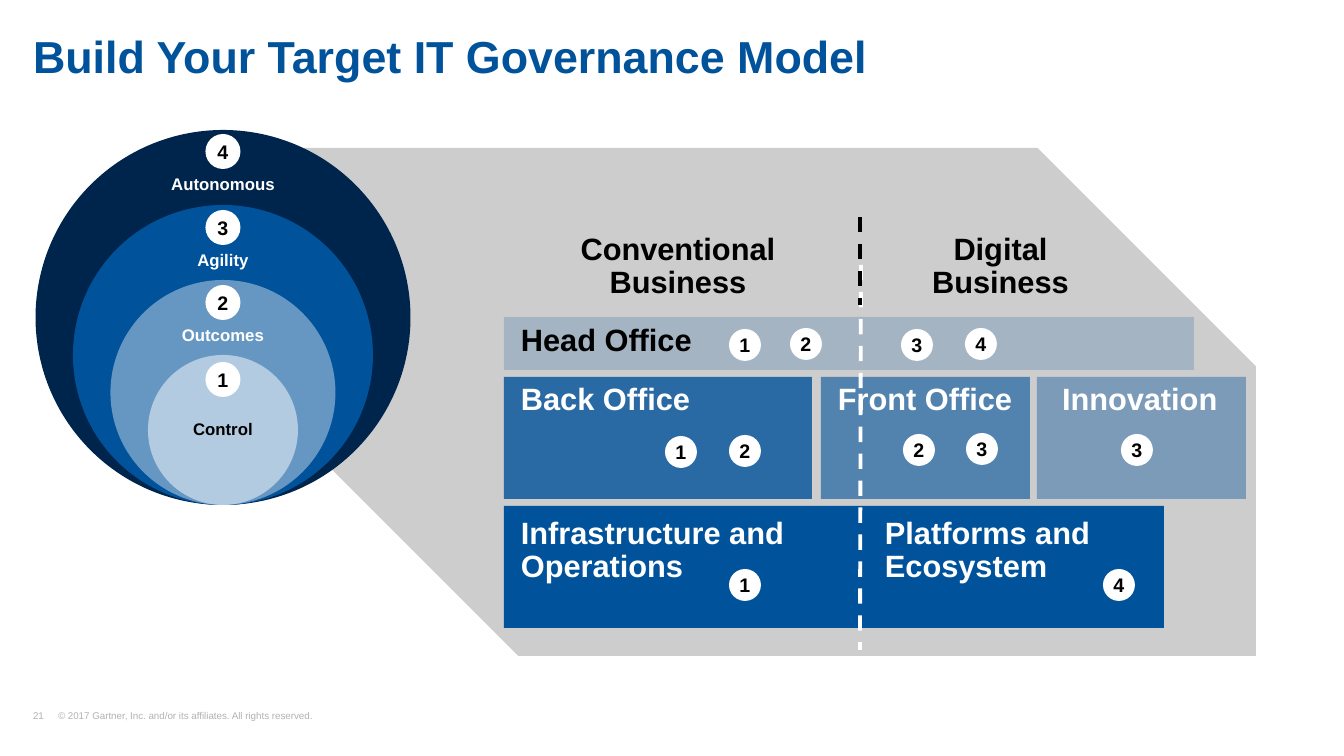
from lxml.etree import SubElement
from pptx import Presentation
from pptx.dml.color import RGBColor
from pptx.enum.dml import MSO_LINE
from pptx.enum.shapes import MSO_CONNECTOR, MSO_SHAPE
from pptx.enum.text import MSO_ANCHOR, PP_ALIGN
from pptx.oxml.ns import qn
from pptx.util import Pt

WHITE = RGBColor(0xFF, 0xFF, 0xFF)
BLACK = RGBColor(0x00, 0x00, 0x00)
NAVY = RGBColor(0x00, 0x25, 0x4C)
BLUE = RGBColor(0x00, 0x52, 0x9B)
MID_BLUE = RGBColor(0x66, 0x97, 0xC3)
PALE_BLUE = RGBColor(0xB2, 0xCB, 0xE1)
PANEL_GREY = RGBColor(0xCD, 0xCD, 0xCD)
FOOTER_GREY = RGBColor(0xB2, 0xB2, 0xB2)

TITLE = "Build Your Target IT Governance Model"
FOOTER = "21\t© 2017 Gartner, Inc. and/or its affiliates. All rights reserved."

# left, top, width, height, opacity in percent
BLOCKS = [
    (504, 506, 660, 122, 100),
    (504, 377, 308, 122, 80),
    (821, 377, 209, 122, 60),
    (1037, 377, 209, 122, 40),
    (504, 317, 690, 53, 20),
]
# text, left, top, width, height, colour, alignment
HEADINGS = [
    ("Conventional\vBusiness", 569, 229, 218, 77, BLACK, PP_ALIGN.CENTER),
    ("Digital\vBusiness", 921, 229, 159, 77, BLACK, PP_ALIGN.CENTER),
    ("Head Office", 511, 320, 194, 43, BLACK, PP_ALIGN.LEFT),
    ("Back Office", 511, 379, 192, 43, WHITE, PP_ALIGN.LEFT),
    ("Front Office", 828, 379, 198, 43, WHITE, PP_ALIGN.LEFT),
    ("Innovation", 1052, 379, 178, 43, WHITE, PP_ALIGN.LEFT),
    ("Infrastructure and\vOperations", 511, 513, 295, 77, WHITE, PP_ALIGN.LEFT),
    ("Platforms and\vEcosystem", 875, 513, 237, 77, WHITE, PP_ALIGN.LEFT),
]
# number, left, top
BLOCK_BADGES = [
    (1, 729, 329), (2, 790, 328), (3, 901, 329), (4, 965, 328),
    (1, 665, 436), (2, 729, 435), (2, 903, 434), (3, 966, 433),
    (3, 1121, 434), (1, 729, 569), (4, 1103, 569),
]
# colour and start and end points
DIVIDERS = [(WHITE, 861, 265, 860, 650), (BLACK, 860, 217, 860, 305)]
# label, fill, text colour, label centre, badge top, from the outside in
RINGS = [
    ("Autonomous", NAVY, WHITE, 185, 134),
    ("Agility", BLUE, WHITE, 261, 210),
    ("Outcomes", MID_BLUE, WHITE, 336, 285),
    ("Control", PALE_BLUE, BLACK, 430, 362),
]
RING_CENTRE, RING_BOTTOM, RING_STEP = 223, 505, 75
BLOCK_BADGE_SIZE, RING_BADGE_SIZE = 32, 35

SLIDE_WIDTH, SLIDE_HEIGHT = 1344, 756
EMU_PER_PX = 12192000 / SLIDE_WIDTH


def px(length):
    return round(length * EMU_PER_PX)


def write(shape, text, size, colour, bold=True, align=PP_ALIGN.LEFT,
          anchor=MSO_ANCHOR.TOP, margins=(0, 0, 0, 0), wrap=False, spacing=0.9):
    """Fill a shape with one formatted paragraph; margins run left, top, right, bottom."""
    frame = shape.text_frame
    frame.word_wrap = wrap
    frame.vertical_anchor = anchor
    (frame.margin_left, frame.margin_top,
     frame.margin_right, frame.margin_bottom) = map(px, margins)
    paragraph = frame.paragraphs[0]
    paragraph.text = text
    paragraph.alignment = align
    paragraph.line_spacing = spacing
    for run in paragraph.runs:
        run.font.name = "Arial"
        run.font.size = Pt(size)
        run.font.bold = bold
        run.font.color.rgb = colour
    return paragraph


def add_text_box(slide, box, *args, **options):
    return write(slide.shapes.add_textbox(*map(px, box)), *args, **options)


def add_filled(slide, kind, box, colour, opacity=100):
    shape = slide.shapes.add_shape(kind, *map(px, box))
    shape.shadow.inherit = False
    shape.line.fill.background()
    shape.fill.solid()
    shape.fill.fore_color.rgb = colour
    if opacity < 100:
        colour_element = shape.fill._xPr.find(qn("a:solidFill"))[0]
        SubElement(colour_element, qn("a:alpha"), val=str(opacity * 1000))
    return shape


def add_badge(slide, number, left, top, size):
    badge = add_filled(slide, MSO_SHAPE.OVAL, (left, top, size, size), WHITE)
    write(badge, str(number), 14, BLACK, align=PP_ALIGN.CENTER,
          anchor=MSO_ANCHOR.MIDDLE, spacing=1.0)


def add_divider(slide, colour, *ends):
    line = slide.shapes.add_connector(MSO_CONNECTOR.STRAIGHT, *map(px, ends))
    line.line.color.rgb = colour
    line.line.width = Pt(2.75)
    line.line.dash_style = MSO_LINE.DASH
    SubElement(line._element.spPr, qn("a:effectLst"))


def add_rings(slide):
    count = len(RINGS)
    for index, (label, fill, colour, label_centre, _) in enumerate(RINGS):
        size = RING_STEP * (count + 1 - index)
        ring = add_filled(slide, MSO_SHAPE.OVAL, (
            RING_CENTRE - size / 2, RING_BOTTOM - size, size, size), fill)
        lift = RING_BOTTOM - size / 2 - label_centre
        write(ring, label, 12, colour, align=PP_ALIGN.CENTER,
              anchor=MSO_ANCHOR.MIDDLE, margins=(0, 0, 0, 2 * lift), wrap=True)
    for index, ring_data in enumerate(RINGS):
        add_badge(slide, count - index, RING_CENTRE - RING_BADGE_SIZE / 2,
                  ring_data[-1], RING_BADGE_SIZE)


def add_footer(slide):
    paragraph = add_text_box(slide, (33, 711, 326, 11), FOOTER, 7, FOOTER_GREY,
                             bold=False, anchor=MSO_ANCHOR.BOTTOM, wrap=True)
    tabs = SubElement(paragraph._p.get_or_add_pPr(), qn("a:tabLst"))
    SubElement(tabs, qn("a:tab"), pos=str(px(25)), algn="l")


def main():
    presentation = Presentation()
    presentation.slide_width = px(SLIDE_WIDTH)
    presentation.slide_height = px(SLIDE_HEIGHT)
    slide = presentation.slides.add_slide(presentation.slide_layouts[6])

    add_footer(slide)
    add_text_box(slide, (33, 25, 1276, 59), TITLE, 32, BLUE,
                 margins=(0, 10, 0, 0), wrap=True)
    panel = add_filled(slide, MSO_SHAPE.SNIP_2_DIAG_RECTANGLE,
                       (300, 148, 956, 508), PANEL_GREY)
    panel.adjustments[0], panel.adjustments[1] = 0, 0.43
    for *box, opacity in BLOCKS:
        add_filled(slide, MSO_SHAPE.RECTANGLE, box, BLUE, opacity)
    for text, *box, colour, align in HEADINGS:
        add_text_box(slide, box, text, 22, colour, align=align,
                     margins=(10, 5, 10, 5))
    for divider in DIVIDERS:
        add_divider(slide, *divider)
    for badge in BLOCK_BADGES:
        add_badge(slide, *badge, BLOCK_BADGE_SIZE)
    add_rings(slide)
    presentation.save("out.pptx")


if __name__ == "__main__":
    main()
